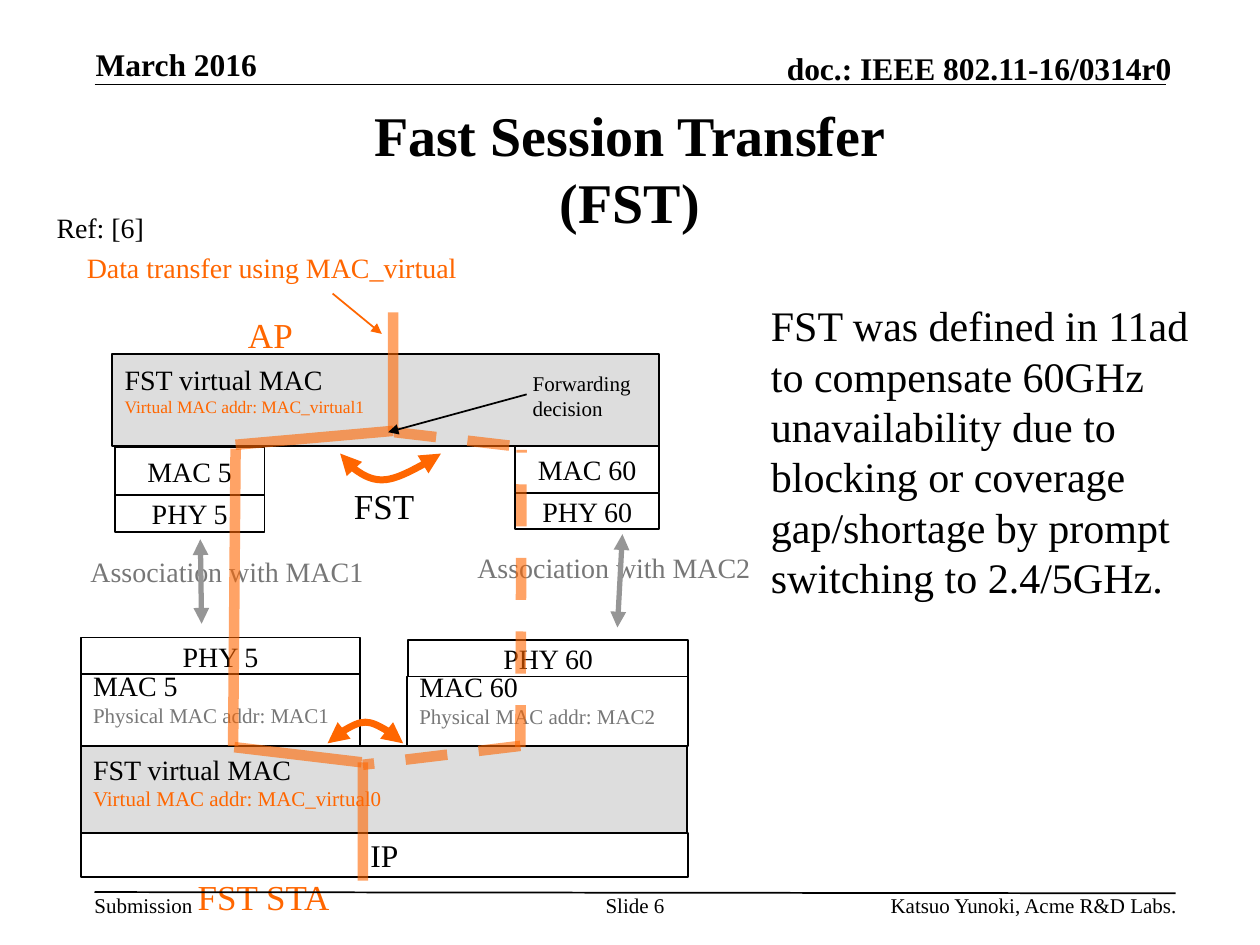
from pptx import Presentation, util as u
from pptx.dml.color import RGBColor
from pptx.enum import dml, shapes as s, text as t
from pptx.oxml import parse_xml
from pptx.oxml.ns import nsdecls, qn

BLACK = RGBColor(0, 0, 0)
WHITE = RGBColor(0xFF, 0xFF, 0xFF)
PALE = RGBColor(0xDD, 0xDD, 0xDD)
GRAY = RGBColor(0x77, 0x77, 0x77)
STEEL = RGBColor(0x96, 0x96, 0x96)
FLAME = RGBColor(0xFF, 0x66, 0x00)
LEFT, MID, RIGHT = t.PP_ALIGN.LEFT, t.PP_ALIGN.CENTER, t.PP_ALIGN.RIGHT
TOP, HALF, LOW = t.MSO_ANCHOR.TOP, t.MSO_ANCHOR.MIDDLE, t.MSO_ANCHOR.BOTTOM

deck = Presentation()
deck.slide_width, deck.slide_height = u.Inches(10), u.Inches(7.5)
CELL = deck.slide_width / 100  # grid of 100 columns by 75 rows
slide = deck.slides.add_slide(deck.slide_layouts[5])
parts = slide.shapes


def put(shape, *rows, size=16, color=BLACK, bold=False, align=LEFT,
        anchor=TOP, wrap=True, pad=(1, 0.5, 1, 0.5)):
    """Fill a shape with rows; a row is a string or (string, size, color)."""
    frame = shape.text_frame
    frame.word_wrap = wrap
    frame.auto_size = t.MSO_AUTO_SIZE.NONE
    frame.vertical_anchor = anchor
    (frame.margin_left, frame.margin_top,
     frame.margin_right, frame.margin_bottom) = [int(n * CELL) for n in pad]
    for i, row in enumerate(rows):
        words, pt, hue = (row, size, color) if isinstance(row, str) else row
        para = frame.paragraphs[0] if i == 0 else frame.add_paragraph()
        para.text = words
        para.alignment = align
        for run in para.runs:
            font = run.font
            font.name, font.size, font.bold = "Times New Roman", u.Pt(pt), bold
            font.color.rgb = hue


def ink(shape, color, width, dash=None, alpha=None, ends=()):
    """Style a stroke; ends names the arrowheads, in the order head, tail."""
    line = shape.line
    line.color.rgb, line.width = color, u.Pt(width)
    if dash:
        line.dash_style = dash
    props = shape.element.spPr
    ln = props.find(qn("a:ln"))
    if alpha:
        ln.find(".//" + qn("a:srgbClr")).append(
            parse_xml(f'<a:alpha {nsdecls("a")} val="{alpha * 1000}"/>'))
    for end in ends:
        ln.append(parse_xml(f'<a:{end}End {nsdecls("a")} type="triangle"/>'))
    props.append(parse_xml(f'<a:effectLst {nsdecls("a")}/>'))


# Title, header and footer
title = parts.title
title.left, title.top, title.width, title.height = [
    int(n * CELL) for n in (7.5, 7.5, 85, 11.6)]
put(title, "Fast Session Transfer\v(FST)", size=32, bold=True, align=MID, anchor=HALF)

edges = [
    ("March 2016", (7.6, 3.6, 20.5, 3), 18, LEFT, LOW),
    ("doc.: IEEE 802.11-16/0314r0", (54.7, 3.9, 38.3, 3), 18, RIGHT, LOW),
    ("Submission", (7.5, 70.8, 9, 2), 12, LEFT, TOP),
    ("Slide 6", (47.5, 70.8, 5.8, 2), 12, MID, TOP),
    ("Katsuo Yunoki, Acme R&D Labs.", (58.6, 70.8, 34.8, 2), 12, RIGHT, TOP),
]
for words, spot, size, align, anchor in edges:
    put(parts.add_textbox(*[int(n * CELL) for n in spot]), words, size=size,
        bold=size == 18, align=align, anchor=anchor, pad=(0, 0, 0, 0))

# Protocol layers of the AP (above) and the FST STA (below)
SMALL = (1, 0.5, 1, 2.1)
DEEP = (1, 0.5, 1, 2.4)
layers = [
    ((8.9, 28.1, 43.4, 7.3), PALE,
     ["FST virtual MAC", ("Virtual MAC addr: MAC_virtual1", 10, FLAME)],
     dict(pad=SMALL)),
    ((40.9, 35.4, 11.4, 3.7), WHITE, ["MAC 60"], dict(align=MID)),
    ((9.1, 35.5, 11.9, 3.8), WHITE, ["MAC 5"], dict(align=MID)),
    ((9.1, 39.3, 11.9, 2.9), None, ["PHY 5"], dict(align=MID)),
    ((40.9, 39.1, 11.4, 2.9), None, ["PHY 60"], dict(align=MID)),
    ((32.4, 50.8, 22.2, 2.9), None, ["PHY 60"], dict(align=MID)),
    ((6.4, 50.6, 22.2, 2.9), None, ["PHY 5"], dict(align=MID)),
    ((6.4, 53.5, 22.2, 5.7), None,
     ["MAC 5", ("Physical MAC addr: MAC1", 12, GRAY)], dict(pad=DEEP)),
    ((32.3, 53.7, 22.3, 5.5), None,
     ["MAC 60", ("Physical MAC addr: MAC2", 12, GRAY)], dict(pad=DEEP)),
    ((6.4, 66.1, 48.2, 3.5), None, ["IP"], dict(size=18, align=MID)),
    ((6.4, 59.2, 48.1, 6.9), PALE,
     ["FST virtual MAC", ("Virtual MAC addr: MAC_virtual0", 12, FLAME)],
     dict(anchor=TOP)),
]
for spot, fill, rows, look in layers:
    rect = parts.add_shape(s.MSO_SHAPE.RECTANGLE, *[int(n * CELL) for n in spot])
    if fill is None:
        rect.fill.background()
    else:
        rect.fill.solid()
        rect.fill.fore_color.rgb = fill
    ink(rect, BLACK, 1)
    put(rect, *rows, **{"anchor": HALF, **look})

# Labels
labels = [
    ("AP", (18.7, 24.4, 5.7, 4.3), 20, FLAME, False),
    ("FST STA", (14.7, 69, 13.2, 4.3), 20, FLAME, False),
    ("Association with MAC1", (6.2, 43.5, 24.6, 3.7), 16, GRAY, False),
    ("Association with MAC2", (36.9, 43.2, 24.6, 3.7), 16, GRAY, False),
    ("Data transfer using MAC_virtual", (5.9, 19.4, 31.8, 3.7), 16, FLAME, False),
    ("FST", (27.1, 38, 7.1, 4.3), 20, BLACK, False),
    ("Forwarding decision", (41.3, 28.9, 10.7, 5), 12, BLACK, True),
    ("FST was defined in 11ad to compensate 60GHz unavailability due to "
     "blocking or coverage gap/shortage by prompt switching to 2.4/5GHz.",
     (60.2, 23.3, 37, 25.2), 24, BLACK, True),
    ("Ref: [6]", (3.5, 16.2, 22.8, 3.7), 16, BLACK, True),
]
for words, spot, size, color, wrap in labels:
    put(parts.add_textbox(*[int(n * CELL) for n in spot]), words,
        size=size, color=color, wrap=wrap)

# Rules, links, data paths and pointers
RULE = dict(color=BLACK, width=1)
LINK = dict(color=STEEL, width=3, ends=("head", "tail"))
FLOW = dict(color=FLAME, width=6, alpha=60)
SPARE = dict(FLOW, dash=dml.MSO_LINE.DASH)
lines = [
    ((7.5, 6.7, 92.5, 6.7), RULE),
    ((7.5, 70.8, 93.3, 70.9), RULE),
    ((16, 49.5, 15.9, 42.8), LINK),
    ((49, 49.8, 49.4, 42.4), LINK),
    ((18.5, 59.2, 18.7, 35.6), FLOW),
    ((18.7, 35.3, 31.2, 34.2), FLOW),
    ((31.2, 34.2, 31.2, 24.8), FLOW),
    ((28.7, 60.5, 18.6, 59.3), FLOW),
    ((28.8, 69.9, 28.8, 60.5), FLOW),
    ((41.3, 59.3, 41.4, 35.7), SPARE),
    ((31.3, 34.3, 41.6, 35.5), SPARE),
    ((41.3, 59.2, 28.8, 60.7), SPARE),
    ((26.4, 23.3, 30.3, 26.5), dict(color=FLAME, width=1, ends=("tail",))),
    ((41.8, 31.3, 30.8, 34.3), dict(RULE, ends=("tail",))),
]
for spot, look in lines:
    ink(parts.add_connector(s.MSO_CONNECTOR.STRAIGHT,
                            *[int(n * CELL) for n in spot]), **look)

# Switching arcs: start, two control points, end
arcs = [
    [(34.8, 36.1), (32.5, 38.2), (29.2, 38.6), (27, 36.2)],
    [(26.3, 59), (27.9, 57.4), (30.4, 57.1), (32.2, 59)],
]
for start, *rest in arcs:
    pen = parts.build_freeform(*start, scale=CELL)
    pen.add_line_segments(rest, close=False)
    arc = pen.convert_to_shape()
    arc.fill.background()
    ink(arc, FLAME, 4, ends=("head", "tail"))
    route = arc.element.find(".//" + qn("a:path"))
    curve = parse_xml(f'<a:cubicBezTo {nsdecls("a")}/>')
    for step in route.findall(qn("a:lnTo")):
        curve.append(step[0])
        route.remove(step)
    route.append(curve)

deck.save("out.pptx")
